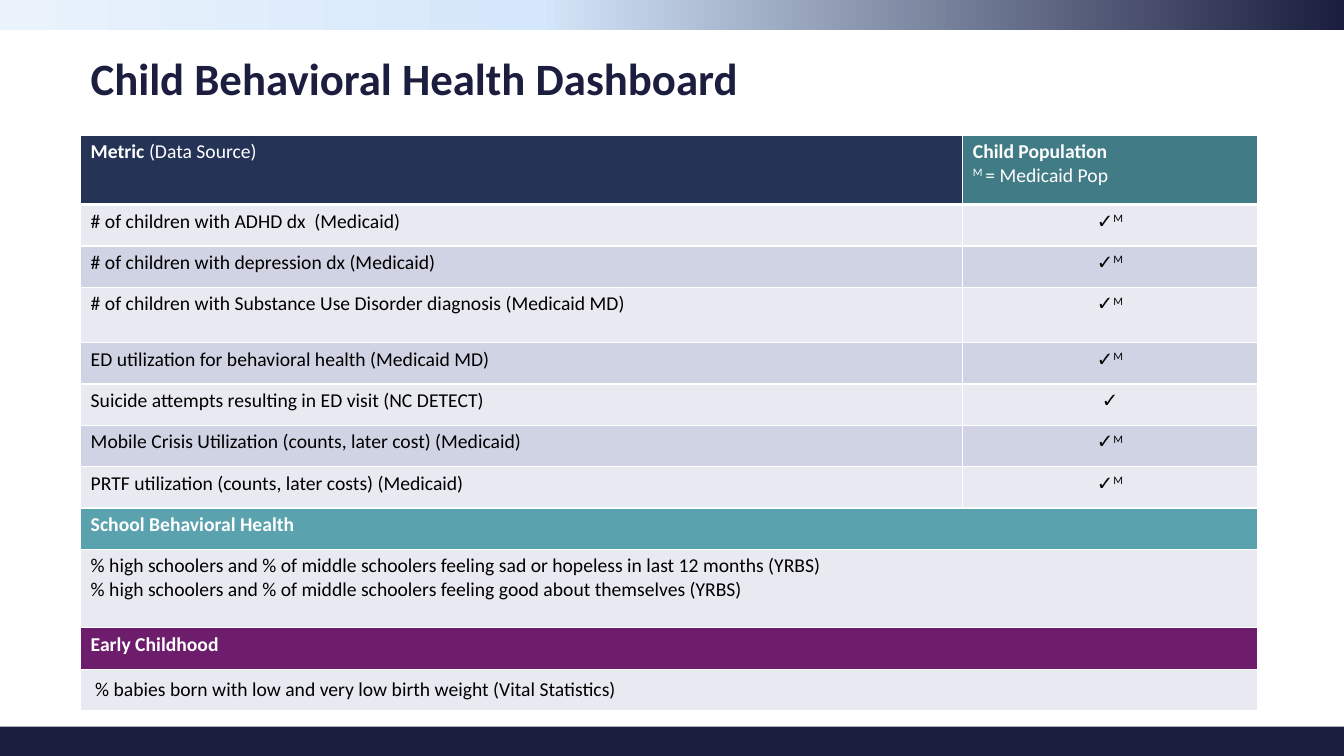
import copy

import pptx
import pptx.dml.color
import pptx.enum.shapes
import pptx.enum.text
import pptx.oxml
import pptx.oxml.ns
import pptx.util

Inches = pptx.util.Inches
Pt = pptx.util.Pt
PP_ALIGN = pptx.enum.text.PP_ALIGN
ANCHOR = pptx.enum.text.MSO_ANCHOR

COLORS = {
    "navy": "1B1E3E", "sky": "D5E7FA", "ice": "EAF3FC",
    "white": "FFFFFF", "black": "000000",
    "metric": "253356", "population": "417B85",
    "school": "5AA2AE", "early": "6D1D6B",
    "light": "E9EAF1", "dark": "D0D3E3",
}

METRICS = [
    ("# of children with ADHD dx  (Medicaid)", True),
    ("# of children with depression dx (Medicaid)", True),
    ("# of children with Substance Use Disorder diagnosis (Medicaid MD)", True),
    ("ED utilization for behavioral health (Medicaid MD)", True),
    ("Suicide attempts resulting in ED visit (NC DETECT)", False),
    ("Mobile Crisis Utilization (counts, later cost) (Medicaid)", True),
    ("PRTF utilization (counts, later costs) (Medicaid)", True),
]
SECTIONS = [
    ("School Behavioral Health", "school", ANCHOR.TOP, [
        "% high schoolers and % of middle schoolers feeling sad or hopeless in last 12 months (YRBS)",
        "% high schoolers and % of middle schoolers feeling good about themselves (YRBS)",
    ]),
    ("Early Childhood", "early", ANCHOR.MIDDLE, [
        " % babies born with low and very low birth weight (Vital Statistics)",
    ]),
]
ROW_HEIGHT = 0.41
TALL_ROWS = {0: 0.69, 3: 0.55, 9: 0.78}


def rgb(name):
    return pptx.dml.color.RGBColor.from_string(COLORS[name])


class DashboardSlide:
    """Holds the slide and its style."""

    font = "Calibri"
    body_size = 14

    def __init__(self, slide):
        self.slide = slide

    def style(self, paragraph, size, color, bold=None):
        font = paragraph.font
        font.name, font.size, font.bold = self.font, Pt(size), bold
        font.color.rgb = rgb(color)

    def band(self, top, height):
        bar = self.slide.shapes.add_shape(
            pptx.enum.shapes.MSO_SHAPE.RECTANGLE,
            0, Inches(top), Inches(13.33), Inches(height))
        bar.shadow.inherit = False
        bar.line.fill.background()
        return bar

    def solid_band(self, top, height, color):
        fill = self.band(top, height).fill
        fill.solid()
        fill.fore_color.rgb = rgb(color)

    def gradient_band(self, top, height, stops):
        bar = self.band(top, height)
        bar.fill.gradient()
        bar.fill.gradient_angle = 180
        stop_list = bar._element.find(".//" + pptx.oxml.ns.qn("a:gsLst"))
        for _ in stops[2:]:
            stop_list.append(copy.deepcopy(stop_list[0]))
        for stop, (position, color) in zip(bar.fill.gradient_stops, stops):
            stop.position = position
            stop.color.rgb = rgb(color)

    def title(self, text):
        box = self.slide.shapes.add_textbox(
            Inches(0.8), Inches(0.5), Inches(11.64), Inches(0.6))
        frame = box.text_frame
        frame.word_wrap = True
        frame.vertical_anchor = ANCHOR.MIDDLE
        heading = frame.paragraphs[0]
        heading.text = text
        heading.line_spacing = 0.9
        self.style(heading, 32, "navy", True)

    def table(self, rows, widths):
        height = sum(TALL_ROWS.get(i, ROW_HEIGHT) for i in range(rows))
        table = self.slide.shapes.add_table(
            rows, len(widths), Inches(0.8), Inches(1.34),
            Inches(sum(widths)), Inches(height)).table
        for column, width in zip(table.columns, widths):
            column.width = Inches(width)
        for i, row in enumerate(table.rows):
            row.height = Inches(TALL_ROWS.get(i, ROW_HEIGHT))
            for cell in row.cells:
                self.borders(cell, 3 if i == 1 else 1, 3 if i == 0 else 1)
        return table

    def borders(self, cell, top, bottom):
        properties = cell._tc.get_or_add_tcPr()
        for side, points in (("L", 1), ("R", 1), ("T", top), ("B", bottom)):
            properties.append(pptx.oxml.parse_xml(
                f'<a:ln{side} {pptx.oxml.ns.nsdecls("a")} w="{Pt(points)}">'
                f'<a:solidFill><a:srgbClr val="{COLORS["white"]}"/></a:solidFill>'
                f'</a:ln{side}>'))

    def cell(self, cell, lines, fill, color="black", bold=None,
             align=None, anchor=ANCHOR.TOP):
        """Fill a cell; each line is a list of (text, bold, superscript) runs."""
        cell.fill.solid()
        cell.fill.fore_color.rgb = rgb(fill)
        cell.vertical_anchor = anchor
        for i, runs in enumerate(lines):
            frame = cell.text_frame
            paragraph = frame.add_paragraph() if i else frame.paragraphs[0]
            paragraph.alignment = align
            self.style(paragraph, self.body_size, color, bold)
            for text, run_bold, raised in runs:
                run = paragraph.add_run()
                run.text = text
                run.font.bold = run_bold
                if raised:
                    run.font._element.set("baseline", "30000")

    def wide_row(self, table, row, lines, fill, **style):
        table.cell(row, 0).merge(table.cell(row, 1))
        self.cell(table.cell(row, 0), [[(line, None, False)] for line in lines],
                  fill, **style)


def main():
    deck = pptx.Presentation()
    deck.slide_width, deck.slide_height = Inches(13.33), Inches(7.5)
    page = DashboardSlide(deck.slides.add_slide(deck.slide_layouts[6]))

    page.solid_band(7.21, 0.3, "navy")
    page.gradient_band(0, 0.3, [(0, "navy"), (0.6, "sky"), (1, "ice")])

    table = page.table(1 + len(METRICS) + 2 * len(SECTIONS), [8.75, 2.92])
    page.cell(table.cell(0, 0),
              [[("Metric ", True, False), ("(Data Source)", False, False)]],
              "metric", "white")
    page.cell(table.cell(0, 1),
              [[("Child Population", True, False)],
               [("M ", False, True), ("= Medicaid Pop", False, False)]],
              "population", "white")

    for row, (metric, medicaid) in enumerate(METRICS, start=1):
        fill = "light" if row % 2 else "dark"
        mark = [("✓", None, False)]
        if medicaid:
            mark.append(("M", None, True))
        page.cell(table.cell(row, 0), [[(metric, None, False)]], fill)
        page.cell(table.cell(row, 1), [mark], fill, align=PP_ALIGN.CENTER)

    first_section = 1 + len(METRICS)
    for i, (heading, color, anchor, measures) in enumerate(SECTIONS):
        row = first_section + 2 * i
        page.wide_row(table, row, [heading], color, color="white", bold=True)
        page.wide_row(table, row + 1, measures, "light", bold=False, anchor=anchor)

    page.title("Child Behavioral Health Dashboard")
    deck.save("out.pptx")


if __name__ == "__main__":
    main()
